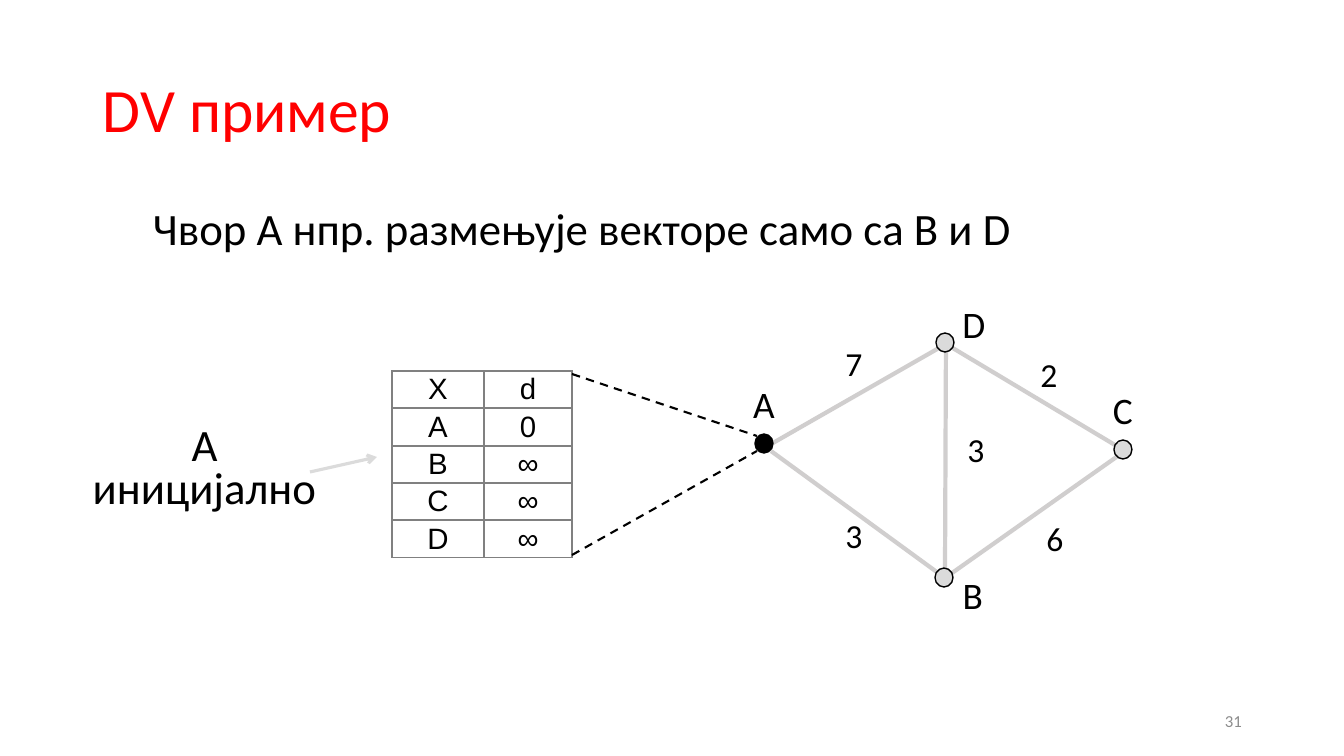
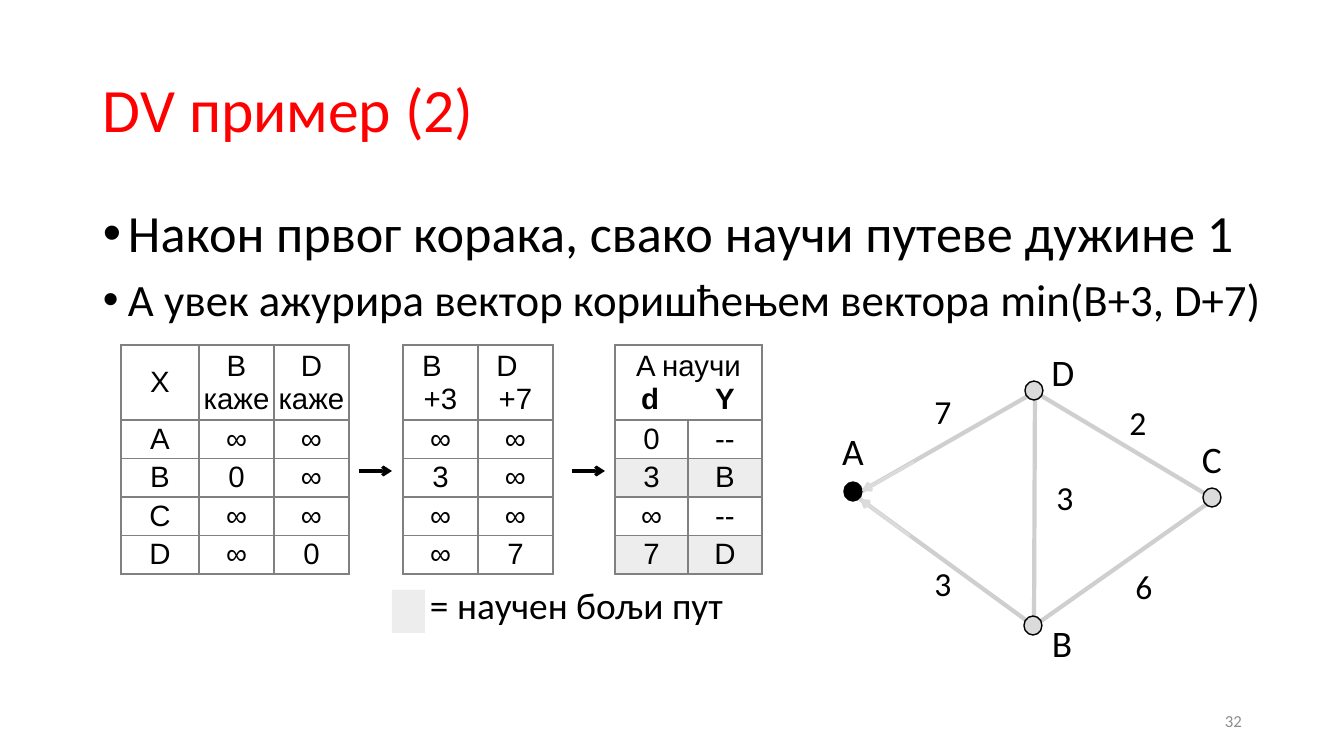
from lxml.etree import SubElement as Sub
from pptx import Presentation
from pptx.dml.color import RGBColor
from pptx.enum.dml import MSO_LINE
from pptx.enum.shapes import MSO_CONNECTOR as Link, MSO_SHAPE as Kind
from pptx.enum.text import MSO_ANCHOR as Anchor, PP_ALIGN as Align
from pptx.oxml.ns import qn
from pptx.util import Emu, Pt

SCALE = 914400 / 100.8
WIDE, HIGH = 1344, 756
BLACK, WHITE, RED = "000000", "FFFFFF", "FF0000"
EDGE, NODE, SHADE = "D0CECE", "DBDBDB", "EDEDED"
RULE, MUTED = "808080", "8C8C8C"
ALIGNS = {"l": Align.LEFT, "c": Align.CENTER, "r": Align.RIGHT}


def px(num):
    return Emu(round(num * SCALE))


def rgb(code):
    return RGBColor.from_string(code)


def style(para, size=24, color=BLACK, font="Calibri", bold=False, align="l",
          lead=None, before=None, bullet=False, stops=()):
    para.alignment = ALIGNS[align]
    if lead:
        para.line_spacing = lead
    if before:
        para.space_before = Pt(before)
    for run in para.runs:
        run.font.size, run.font.name, run.font.bold = Pt(size), font, bold
        run.font.color.rgb = rgb(color)
    props = para._p.get_or_add_pPr()
    if bullet:
        props.set("marL", str(px(25)))
        props.set("indent", str(-px(25)))
        Sub(props, qn("a:buFont"), typeface="Arial")
        Sub(props, qn("a:buChar"), char="•")
    if stops:
        tabs = Sub(props, qn("a:tabLst"))
        for stop in stops:
            Sub(tabs, qn("a:tab"), pos=str(px(stop)), algn="ctr")


def write(frame, paras, **fmt):
    """Fill a frame; a paragraph is a string or a (string, own format) pair."""
    if isinstance(paras, str):
        paras = [paras]
    for num, item in enumerate(paras):
        words, own = (item, {}) if isinstance(item, str) else item
        para = frame.add_paragraph() if num else frame.paragraphs[0]
        para.add_run().text = words
        style(para, **{**fmt, **own})


def label(slide, box, paras, mid=False, wrap=True, pad=(10, 5), **fmt):
    frame = slide.shapes.add_textbox(*map(px, box)).text_frame
    frame.word_wrap = wrap
    frame.vertical_anchor = Anchor.MIDDLE if mid else Anchor.TOP
    frame.margin_left = frame.margin_right = px(pad[0])
    frame.margin_top = frame.margin_bottom = px(pad[1])
    write(frame, paras, **fmt)


def line(slide, start, end, color, width, arrow=False, dash=False):
    link = slide.shapes.add_connector(
        Link.STRAIGHT, *map(px, (*start, *end)))
    link.line.color.rgb = rgb(color)
    link.line.width = Pt(width)
    if dash:
        link.line.dash_style = MSO_LINE.DASH
    if arrow:
        Sub(link.line._get_or_add_ln(), qn("a:tailEnd"), type="arrow")
    Sub(link._element.spPr, qn("a:effectLst"))


def shape(slide, kind, box, fill, edge=None):
    item = slide.shapes.add_shape(kind, *map(px, box))
    item.shadow.inherit = False
    item.fill.solid()
    item.fill.fore_color.rgb = rgb(fill)
    if edge:
        item.line.color.rgb = rgb(edge)
        item.line.width = Pt(1)
    else:
        item.line.fill.background()


def border(cell):
    props = cell._tc.get_or_add_tcPr()
    for side in "LRTB":
        edge = Sub(props, qn("a:ln" + side), w=str(Pt(1.5)))
        Sub(Sub(edge, qn("a:solidFill")), qn("a:srgbClr"), val=RULE)


def grid(slide, spot, cols, highs, rows, shaded=()):
    """Draw a ruled table; a None entry joins the cell on its left."""
    size = sum(cols), sum(highs)
    table = slide.shapes.add_table(
        len(rows), len(cols), *map(px, (*spot, *size))).table
    table.first_row = table.horz_banding = False
    for col, wide in zip(table.columns, cols):
        col.width = px(wide)
    for r, row in enumerate(rows):
        table.rows[r].height = px(highs[r])
        for c, words in enumerate(row):
            cell = table.cell(r, c)
            border(cell)
            cell.fill.solid()
            cell.fill.fore_color.rgb = rgb(SHADE if r in shaded else WHITE)
            cell.margin_left = cell.margin_right = 0
            cell.margin_top = cell.margin_bottom = px(1)
            cell.vertical_anchor = Anchor.MIDDLE
            if words is None:
                table.cell(r, c - 1).merge(cell)
            else:
                write(cell.text_frame, words, size=21, font="Arial",
                      align="c")


def graph(slide, left, top, arrows=False):
    """Draw the four-node network, with arrows into A if asked."""
    def at(x, y):
        return left + x, top + y

    def tag(x, y, words, size):
        label(slide, (*at(x - 21, y - 27), 42, 54), words, mid=True,
              wrap=False, pad=(0, 0), size=size, align="c")

    upper, lower = (30, 147), (28, 155)
    b, c, d = (202, 282), (382, 155), (203, 48)
    for start, end in [(b, c), (b, d), (b, lower), (upper, d), (d, c)]:
        line(slide, at(*start), at(*end), EDGE, 3)
    nodes = [("D", 202, 47, 231, 28), ("B", 201, 282, 230, 299),
             ("C", 380, 154, 380, 114), ("A", 21, 148, 21, 107)]
    for name, x, y, tx, ty in nodes:
        fill = BLACK if name == "A" else NODE
        shape(slide, Kind.OVAL, (*at(x - 9, y - 10), 18, 19), fill, BLACK)
        tag(tx, ty, name, 26.7)
    for cost, x, y in [("2", 306, 78), ("6", 312, 242), ("7", 111, 67),
                       ("3", 111, 239), ("3", 233, 153)]:
        tag(x, y, cost, 24)
    if arrows:
        for start, end in [((78, 192), lower), ((82, 118), upper)]:
            line(slide, at(*start), at(*end), NODE, 2.25, arrow=True)


def base(prs, title, page):
    slide = prs.slides.add_slide(prs.slide_layouts[6])
    label(slide, (93, 40, 1159, 146), title, mid=True, size=44, color=RED,
          lead=0.9)
    label(slide, (950, 701, 302, 40), page, mid=True, size=12, color=MUTED,
          align="r")
    return slide


def start(prs):
    slide = base(prs, "DV пример", "31")
    label(slide, (143, 202, 1109, 60),
          "Чвор A нпр. размењује векторе само са B и D",
          size=32, lead=0.9, before=5)
    graph(slide, 743, 296)
    grid(slide, (392, 371), (92, 88), [37] * 5,
         ["Xd", "A0", "B∞", "C∞", "D∞"])
    line(slide, (310, 472), (377, 457), NODE, 2.25, arrow=True)
    label(slide, (74, 422, 261, 97), "А иницијално", size=32, lead=0.8,
          align="c")
    for y, end in [(374, 436), (555, 451)]:
        line(slide, (572, y), (757, end), BLACK, 1.5, dash=True)


def update(prs):
    slide = base(prs, "DV пример (2)", "32")
    label(slide, (93, 202, 1186, 130),
          [("Након првог корака, свако научи путеве дужине 1",
            {"size": 37.3}),
           "A увек ажурира вектор коришћењем вектора min(B+3, D+7)"],
          size=32, lead=0.9, before=10, bullet=True)

    top, highs = 345, [75] + [38.5] * 4
    shift = {"align": "l", "stops": (29,)}
    pair = {"align": "l", "stops": (35, 110), "bold": True}
    grid(slide, (121, top), (78, 75, 75), highs,
         [("X", ["B", "каже"], ["D", "каже"]),
          "A∞∞", "B0∞", "C∞∞", "D∞0"])
    grid(slide, (403, top), (75, 75), highs,
         [([("\tB", shift), "+3"], [("\tD", shift), "+7"]),
          "∞∞", "3∞", "∞∞", "∞7"])
    grid(slide, (615, top), (73, 74), highs,
         [(["A научи", ("\td\tY", pair)], None),
          ("0", "--"), "3B", ("∞", "--"), "7D"], shaded=(2, 4))
    for x in (359, 572):
        line(slide, (x, 471), (x + 33, 471), BLACK, 2.25, arrow=True)

    graph(slide, 832, 344, arrows=True)
    label(slide, (420, 586, 392, 47), "= научен бољи пут", size=26.7,
          lead=0.8)
    shape(slide, Kind.RECTANGLE, (392, 590, 33, 43), SHADE)


def main():
    prs = Presentation()
    prs.slide_width, prs.slide_height = px(WIDE), px(HIGH)
    start(prs)
    update(prs)
    prs.save("out.pptx")


if __name__ == "__main__":
    main()
